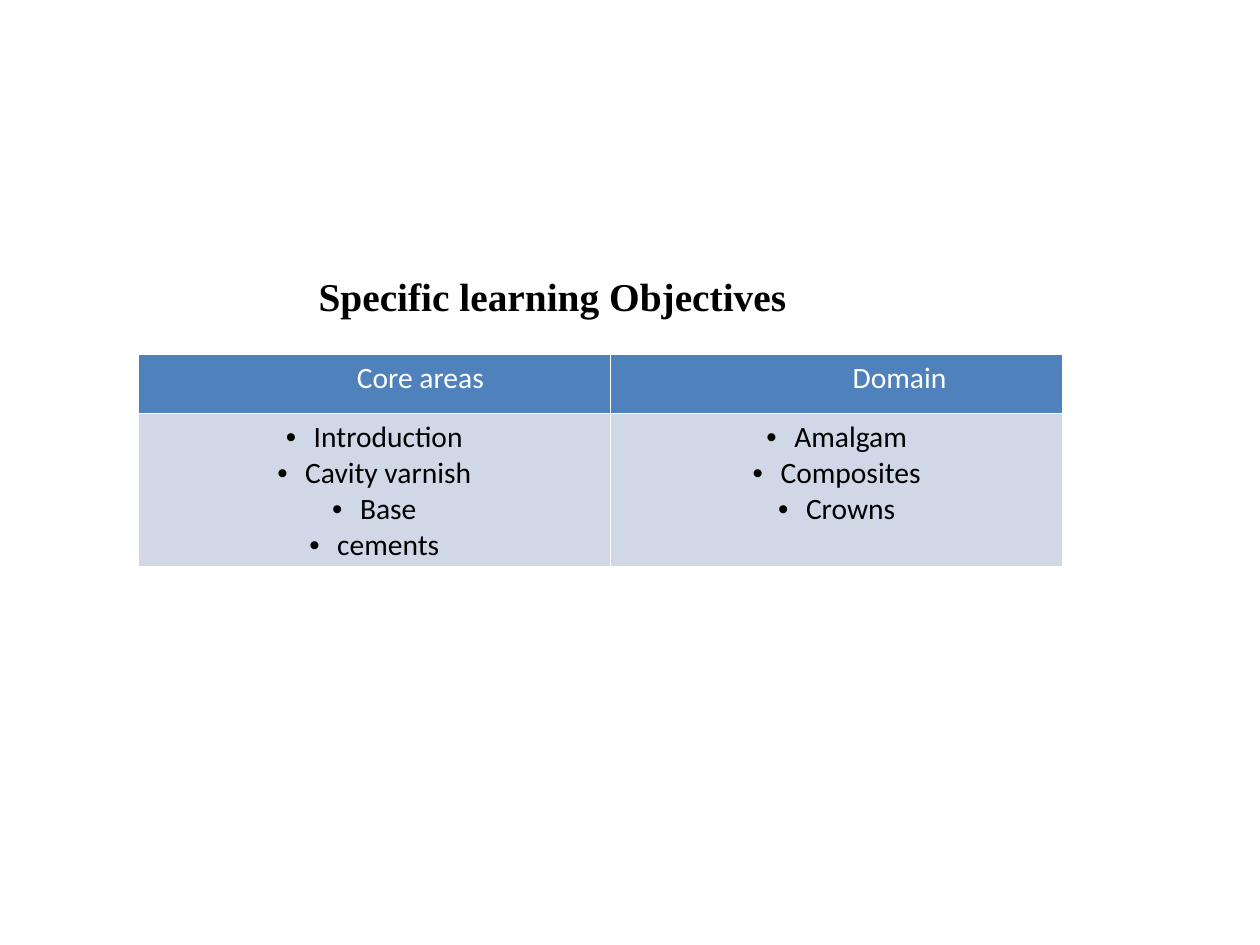
from dataclasses import dataclass

from lxml.etree import SubElement
from pptx import Presentation
from pptx.dml.color import RGBColor as RGB
from pptx.enum.text import MSO_AUTO_SIZE as AutoSize, PP_ALIGN as Align
from pptx.oxml.ns import qn
from pptx.util import Cm, Pt


@dataclass(frozen=True)
class Theme:
    title_font: str = "Times New Roman"
    body_font: str = "Calibri"
    title_size: int = 24
    body_size: int = 18
    black: str = "000000"
    white: str = "FFFFFF"
    header_fill: str = "4F81BD"
    body_fill: str = "D0D8E8"
    border_width: int = 1


@dataclass(frozen=True)
class Column:
    heading: str
    heading_margin: float  # cm, moves the centred heading to the right
    items: tuple[str, ...]
    width: float  # cm


THEME = Theme()
BULLET_INDENT = Cm(0.6)
ROW_HEIGHTS = (1.27, 3.3)
COLUMNS = (
    Column("Core areas", 2.24, ("Introduction", "Cavity varnish", "Base", "cements"), 10.16),
    Column("Domain", 2.96, ("Amalgam", "Composites", "Crowns"), 9.73),
)


def add_text(p, text: str, color: str, **font_format) -> None:
    """Write one centred run into a paragraph."""
    p.alignment = Align.CENTER
    r = p.add_run()
    r.text = text
    values = {"name": THEME.body_font, "size": Pt(THEME.body_size), "bold": False} | font_format
    for name, value in values.items():
        setattr(r.font, name, value)
    r.font.color.rgb = RGB.from_string(color)


def add_bullet(p) -> None:
    pPr = p._p.get_or_add_pPr()
    pPr.set("marL", str(BULLET_INDENT))
    pPr.set("indent", str(-BULLET_INDENT))
    SubElement(pPr, qn("a:buFont"), typeface="Arial")
    SubElement(pPr, qn("a:buChar"), char="•")


def style_cell(cell, fill: str) -> None:
    """Give a cell its border lines and its fill."""
    tcPr = cell._tc.get_or_add_tcPr()
    for side in ("lnL", "lnR", "lnT", "lnB"):
        ln = SubElement(tcPr, qn(f"a:{side}"), w=str(Pt(THEME.border_width)))
        solid = SubElement(ln, qn("a:solidFill"))
        SubElement(solid, qn("a:srgbClr"), val=THEME.white)
    cell.fill.solid()
    cell.fill.fore_color.rgb = RGB.from_string(fill)


def add_title(s, text: str) -> None:
    tf = s.shapes.add_textbox(Cm(6.45), Cm(5.72), Cm(10.87), Cm(1.27)).text_frame
    tf.word_wrap = False
    tf.auto_size = AutoSize.SHAPE_TO_FIT_TEXT
    add_text(tf.paragraphs[0], text, THEME.black, name=THEME.title_font,
             size=Pt(THEME.title_size), bold=True)


def add_objectives(s, columns: tuple[Column, ...]) -> None:
    width = sum(column.width for column in columns)
    table = s.shapes.add_table(len(ROW_HEIGHTS), len(columns), Cm(2.97), Cm(7.62),
                               Cm(width), Cm(sum(ROW_HEIGHTS))).table
    for row, height in zip(table.rows, ROW_HEIGHTS):
        row.height = Cm(height)
    for i, column in enumerate(columns):
        table.columns[i].width = Cm(column.width)

        # Heading
        head, body = table.cell(0, i), table.cell(1, i)
        style_cell(head, THEME.header_fill)
        head.margin_left = Cm(column.heading_margin)
        add_text(head.text_frame.paragraphs[0], column.heading, THEME.white)

        # Bulleted items
        style_cell(body, THEME.body_fill)
        tf = body.text_frame
        for n, item in enumerate(column.items):
            p = tf.add_paragraph() if n else tf.paragraphs[0]
            add_text(p, item, THEME.black)
            add_bullet(p)


def main() -> None:
    prs = Presentation()
    prs.slide_width, prs.slide_height = Cm(27.1), Cm(20.32)
    s = prs.slides.add_slide(prs.slide_layouts[6])
    add_title(s, "Specific learning Objectives")
    add_objectives(s, COLUMNS)
    prs.save("out.pptx")


if __name__ == "__main__":
    main()
